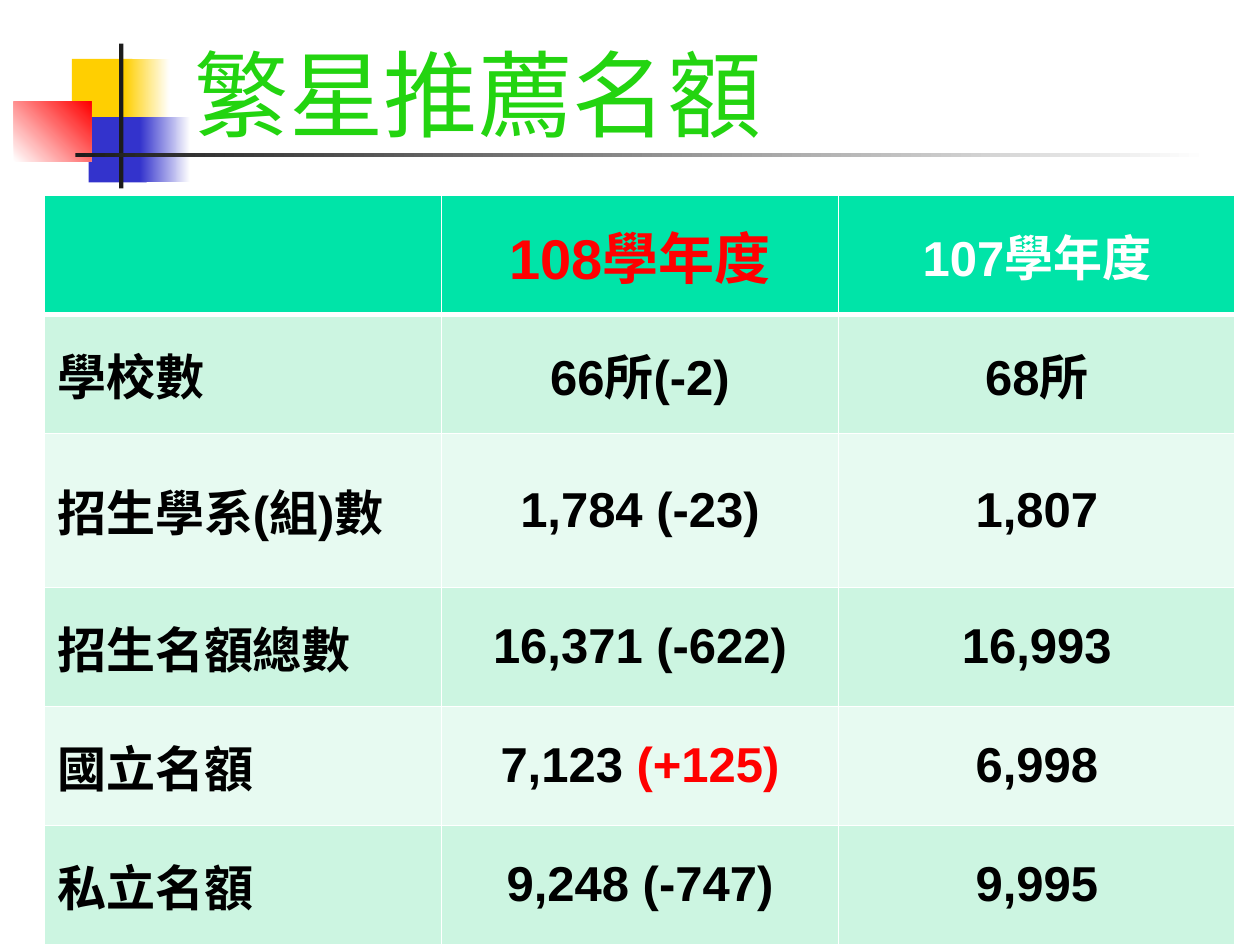
import pptx
import pptx.dml.color
import pptx.enum.shapes
import pptx.enum.text
import pptx.oxml
import pptx.oxml.ns
import pptx.util

Cm = pptx.util.Cm
Pt = pptx.util.Pt
ALIGN = pptx.enum.text.PP_ALIGN
ANCHOR = pptx.enum.text.MSO_ANCHOR

COLORS = {
    "white": "FFFFFF", "black": "000000", "ink": "1C1C1C",
    "yellow": "FFCF01", "blue": "3333CC", "red": "FF0000",
    "title": "23D410", "header": "00E4A8",
    "band_dark": "CCF5E1", "band_light": "E7FAF1",
}


def rgb(name):
    return pptx.dml.color.RGBColor.from_string(COLORS[name])


class SlideStyle:
    font = "Arial"

    def __init__(self, slide):
        self.slide = slide

    def block(self, left, top, width, height, color, end=None, angle=0):
        """A plain rectangle, or one fading from color to end."""
        shape = self.slide.shapes.add_shape(
            pptx.enum.shapes.MSO_SHAPE.RECTANGLE,
            Cm(left), Cm(top), Cm(width), Cm(height))
        shape.shadow.inherit = False
        shape.line.fill.background()
        if end is None:
            shape.fill.solid()
            shape.fill.fore_color.rgb = rgb(color)
            return
        shape.fill.gradient()
        shape.fill.gradient_angle = angle
        for stop, name, position in zip(shape.fill.gradient_stops, (color, end), (0, 1)):
            stop.color.rgb = rgb(name)
            stop.position = position

    def span(self, para, text, size, color, bold=False):
        run = para.add_run()
        run.text = text
        run.font.name = self.font
        run.font.size = Pt(size)
        run.font.bold = bold
        run.font.color.rgb = rgb(color)

    def title(self, left, top, width, height, text):
        box = self.slide.shapes.add_textbox(Cm(left), Cm(top), Cm(width), Cm(height))
        box.text_frame.word_wrap = True
        box.text_frame.vertical_anchor = ANCHOR.BOTTOM
        self.span(box.text_frame.paragraphs[0], text, 54, "title")

    def borders(self, cell, bottom):
        properties = cell._tc.get_or_add_tcPr()
        sides = (("lnL", 1), ("lnR", 1), ("lnT", 1), ("lnB", bottom))
        for index, (side, width) in enumerate(sides):
            properties.insert(index, pptx.oxml.parse_xml(
                f'<a:{side} {pptx.oxml.ns.nsdecls("a")} w="{Pt(width)}"><a:solidFill>'
                f'<a:srgbClr val="{COLORS["white"]}"/></a:solidFill></a:{side}>'))

    def table(self, left, top, column_width, row_heights, rows):
        """Each cell is a list of (text, size, color) spans."""
        columns = len(rows[0])
        table = self.slide.shapes.add_table(
            len(rows), columns, Cm(left), Cm(top),
            Cm(column_width * columns), Cm(sum(row_heights))).table
        for column in table.columns:
            column.width = Cm(column_width)
        for r, (row, height) in enumerate(zip(rows, row_heights)):
            table.rows[r].height = Cm(height)
            band = "header" if r == 0 else ("band_light", "band_dark")[r % 2]
            for c, spans in enumerate(row):
                cell = table.cell(r, c)
                cell.fill.solid()
                cell.fill.fore_color.rgb = rgb(band)
                cell.vertical_anchor = ANCHOR.MIDDLE
                self.borders(cell, 3 if r == 0 else 1)
                para = cell.text_frame.paragraphs[0]
                para.alignment = ALIGN.CENTER if c else ALIGN.LEFT
                for text, size, color in spans:
                    self.span(para, text, size, color, bold=True)


def body(text, color="black"):
    return (text, 28, color)


def main():
    deck = pptx.Presentation()
    deck.slide_width, deck.slide_height = Cm(25.4), Cm(19.05)
    page = SlideStyle(deck.slides.add_slide(deck.slide_layouts[6]))

    # Corner ornament
    page.block(1.45, 1.19, 1.22, 1.32, "yellow")
    page.block(2.51, 1.19, 0.91, 1.32, "yellow", "white")
    page.block(1.79, 2.36, 1.17, 1.32, "blue")
    page.block(2.82, 2.36, 1.02, 1.32, "blue", "white")
    page.block(0.28, 2.05, 1.56, 1.2, "white", "red", angle=45)
    page.block(2.4, 0.88, 0.09, 2.92, "ink")
    page.block(1.52, 3.08, 22.86, 0.08, "ink", "white")

    # Title
    page.title(3.68, 0.46, 21.51, 2.67, "繁星推薦名額")

    # Quota table; the row with a two-line label is taller
    header = [[], [("108學年度", 32, "red")], [body("107學年度", "white")]]
    records = [
        ("學校數", "66所(-2)", "68所"),
        ("招生學系(組)數", "1,784 (-23)", "1,807"),
        ("招生名額總數", "16,371 (-622)", "16,993"),
        ("國立名額", "7,123 ", "6,998"),
        ("私立名額", "9,248 (-747)", "9,995"),
    ]
    rows = [header] + [[[body(text)] for text in record] for record in records]
    rows[4][1].append(body("(+125)", "red"))
    row_heights = [2.4] * len(rows)
    row_heights[2] = 3.1
    page.table(0.9, 3.94, 8, row_heights, rows)

    deck.save("out.pptx")


if __name__ == "__main__":
    main()
